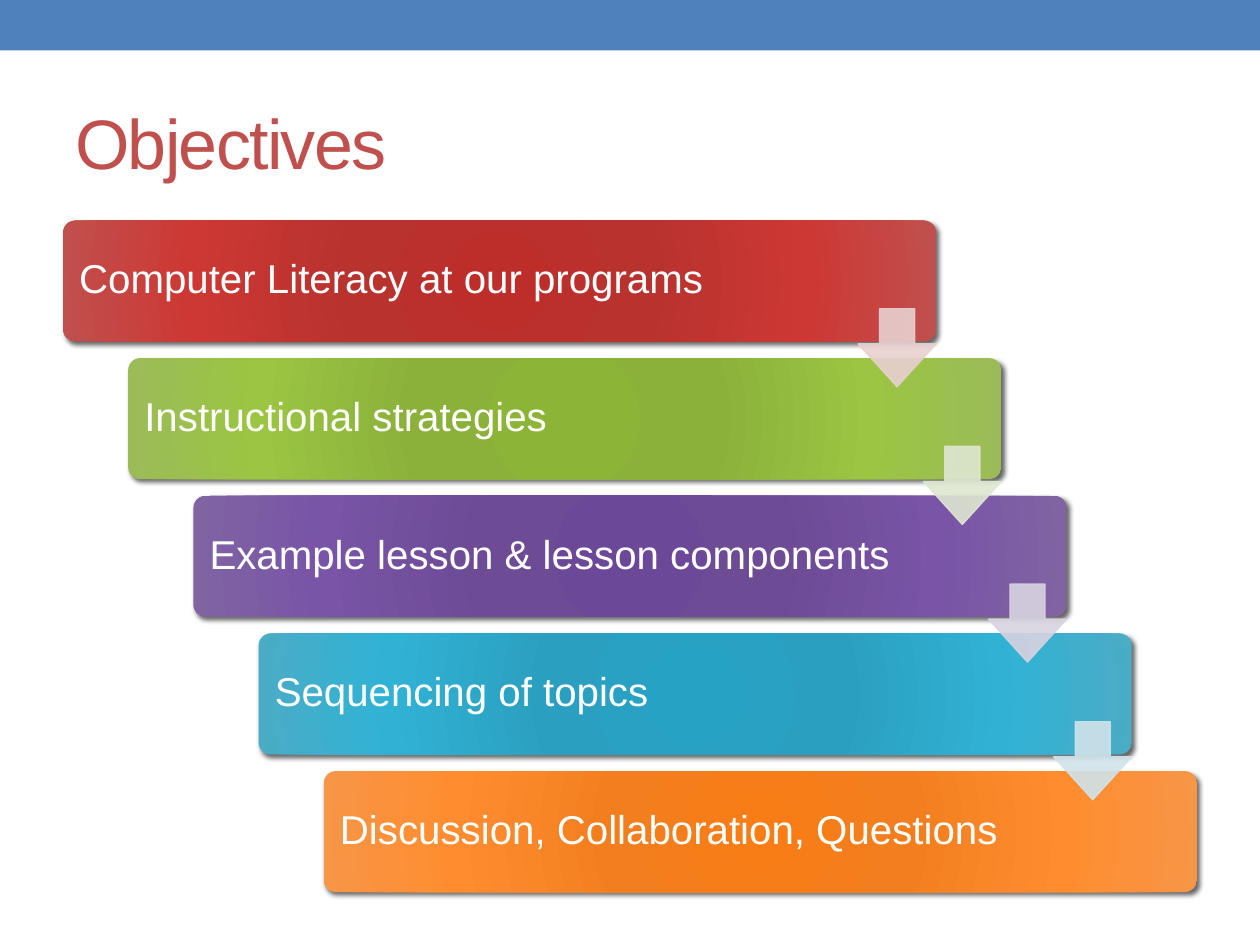
from pptx import Presentation
from pptx.dml.color import RGBColor
from pptx.enum.shapes import MSO_SHAPE as SHAPE
from pptx.enum.text import MSO_ANCHOR as ANCHOR
from pptx.oxml import parse_xml
from pptx.oxml.ns import nsdecls, qn
from pptx.util import Inches, Pt

BARS = [
    ("Computer Literacy at our programs", ("BD2D29", "B8322E", "CD3834", "C0504D")),
    ("Instructional strategies", ("8CB537", "8BB13B", "9BC542", "9BBB59")),
    ("Example lesson & lesson components", ("6C4898", "6D4B95", "7954A7", "8064A2")),
    ("Sequencing of topics", ("26A2C4", "2B9FBF", "30B2D5", "4BACC6")),
    ("Discussion, Collaboration, Questions", ("F97D16", "F27E1E", "FF8D30", "F79646")),
]
ARROWS = ["E8D0D0", "DEE7D1", "D8D3E0", "D0E3EA"]
STOPS = (0, 34, 70, 100)
BAR_W, BAR_H = 6.93, 0.96
LEFT, TOP = 0.5, 1.75
STEP_X = (9 - BAR_W) / (len(BARS) - 1)
STEP_Y = 4.37 / (len(BARS) - 1)


def rgb(value):
    return RGBColor.from_string(value)


class Deck:
    """Hold the style and the current slide, and draw each kind of element."""

    font = "Arial"
    frame = {"word_wrap": True, "vertical_anchor": ANCHOR.MIDDLE}

    def __init__(self, width, height):
        self.prs = Presentation()
        self.prs.slide_width, self.prs.slide_height = Inches(width), Inches(height)
        self.slide = self.prs.slides.add_slide(self.prs.slide_layouts[6])

    def shape(self, kind, box, color, adjustments=()):
        sp = self.slide.shapes.add_shape(kind, *map(Inches, box))
        sp.shadow.inherit = False
        sp.fill.solid()
        sp.fill.fore_color.rgb = rgb(color)
        sp.line.fill.background()
        for i, value in enumerate(adjustments):
            sp.adjustments[i] = value
        return sp

    def text(self, text, box, size, color, inset_y=0.1, line_spacing=1.0, spacing=None):
        tf = self.slide.shapes.add_textbox(*map(Inches, box)).text_frame
        margins = {"margin_left": 0.1, "margin_right": 0.1,
                   "margin_top": inset_y, "margin_bottom": inset_y}
        for name, value in self.frame.items():
            setattr(tf, name, value)
        for name, value in margins.items():
            setattr(tf, name, Inches(value))
        p = tf.paragraphs[0]
        p.line_spacing = line_spacing
        r = p.add_run()
        r.text = text
        for name, value in {"name": self.font, "size": Pt(size)}.items():
            setattr(r.font, name, value)
        r.font.color.rgb = rgb(color)
        if spacing is not None:
            r._r.get_or_add_rPr().set("spc", str(spacing * 100))

    def bar(self, text, left, top, colors):
        sp = self.shape(SHAPE.ROUNDED_RECTANGLE, (left, top, BAR_W, BAR_H), colors[-1], [0.1])
        stops = "".join(
            f'<a:gs pos="{pos * 1000}"><a:srgbClr val="{color}"/></a:gs>'
            for pos, color in zip(STOPS, colors))
        gradient = parse_xml(
            f'<a:gradFill {nsdecls("a")} rotWithShape="1"><a:gsLst>{stops}</a:gsLst>'
            '<a:path path="circle"><a:fillToRect l="100000" t="100000" r="100000" b="100000"/>'
            '</a:path></a:gradFill>')
        shadow = parse_xml(
            f'<a:outerShdw {nsdecls("a")} blurRad="{Pt(3)}" dist="{Pt(2)}" dir="2700000" '
            'rotWithShape="0"><a:srgbClr val="000000"><a:alpha val="60000"/></a:srgbClr>'
            '</a:outerShdw>')
        props = sp._element.spPr
        props.replace(props.find(qn("a:solidFill")), gradient)
        props.find(qn("a:effectLst")).append(shadow)
        self.text(text, (left + 0.03, top + 0.03, 5.73, 0.9), 23, "FFFFFF", line_spacing=0.9)

    def arrow(self, left, top, color):
        sp = self.shape(SHAPE.DOWN_ARROW, (left, top, 0.62, 0.62), color, [0.45, 0.55])
        sp.line.color.rgb = rgb(color)
        sp.line.width = Pt(0.75)
        for clr in sp._element.spPr.iter(qn("a:srgbClr")):
            clr.append(parse_xml(f'<a:alpha {nsdecls("a")} val="90000"/>'))


def main():
    deck = Deck(10, 7.5)
    deck.shape(SHAPE.RECTANGLE, (0, 0, 10, 0.4), "4F81BD")
    deck.text("Objectives", (0.5, 0.58, 9, 1.08), 40, "C0504D", inset_y=0.05, spacing=-1)
    for i, (text, colors) in enumerate(BARS):
        deck.bar(text, LEFT + i * STEP_X, TOP + i * STEP_Y, colors)
    for i, color in enumerate(ARROWS):
        deck.arrow(6.81 + i * STEP_X, 2.45 + i * STEP_Y, color)
    deck.prs.save("out.pptx")


if __name__ == "__main__":
    main()
